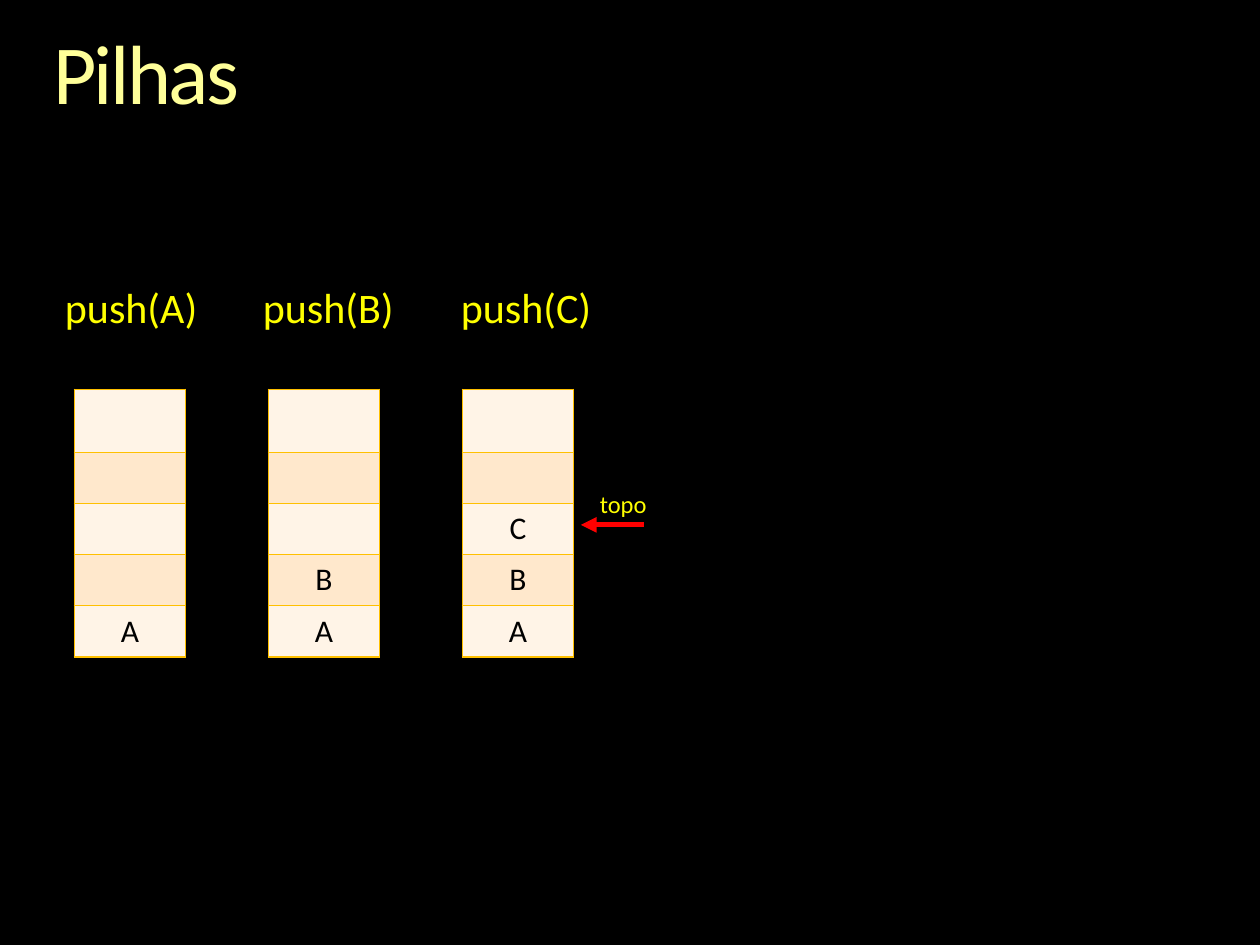
from lxml import etree
from pptx import Presentation
from pptx.dml.color import RGBColor
from pptx.enum.shapes import MSO_CONNECTOR
from pptx.enum.text import PP_ALIGN
from pptx.oxml import parse_xml
from pptx.oxml.ns import nsdecls, qn
from pptx.util import Cm, Pt

STRAIGHT = MSO_CONNECTOR.STRAIGHT
LEFT, CENTER = PP_ALIGN.LEFT, PP_ALIGN.CENTER


def color(value):
    return RGBColor.from_string(value)


def style(p, size, value, align=LEFT):
    p.alignment = align
    p.font.name = "Calibri"
    p.font.size = Pt(size)
    p.font.color.rgb = color(value)


prs = Presentation()
prs.slide_width, prs.slide_height = Cm(25.4), Cm(19.05)
s = prs.slides.add_slide(prs.slide_layouts[6])
s.background.fill.solid()
s.background.fill.fore_color.rgb = color("000000")

# Title
tf = s.shapes.add_textbox(Cm(1.07), Cm(0.64), Cm(23.29), Cm(1.85)).text_frame
tf.word_wrap = True
tf.margin_left = tf.margin_right = tf.margin_top = tf.margin_bottom = 0
p = tf.paragraphs[0]
r = p.add_run()
r.text = "Pilhas"
r.font._element.set("spc", "-150")
p.line_spacing = 0.9
style(p, 48, "FFFF99")

# Operation labels, one tab stop per stack
pitch = 3.99
tf = s.shapes.add_textbox(Cm(0.48), Cm(5.56), Cm(24.46), Cm(1.27)).text_frame
tf.word_wrap = True
tf.margin_left = Cm(0.83)
p = tf.paragraphs[0]
p.text = "push(A)\tpush(B)\tpush(C)"
tabs = etree.SubElement(p._p.get_or_add_pPr(), qn("a:tabLst"))
for i in (1, 2):
    etree.SubElement(tabs, qn("a:tab"), pos=str(Cm(pitch * i)), algn="l")
style(p, 24, "FFFF00")

# Stacks, filled from the bottom up
heights = [1.27] + [1.03] * 4
bands = ["FFF4E7", "FFE8CC"]
for i, items in enumerate(["A", "BA", "CBA"]):
    table = s.shapes.add_table(5, 1, Cm(1.5 + 3.91 * i), Cm(7.85),
                               Cm(2.24), Cm(sum(heights))).table
    table.first_row = table.horz_banding = False
    for row, text in enumerate(items.rjust(5)):
        table.rows[row].height = Cm(heights[row])
        cell = table.cell(row, 0)
        cell.text = text.strip()
        style(cell.text_frame.paragraphs[0], 18, "000000", CENTER)
        tcPr = cell._tc.get_or_add_tcPr()
        for side in ("lnL", "lnR", "lnT", "lnB"):
            tcPr.append(parse_xml(
                f'<a:{side} {nsdecls("a")} w="12700"><a:solidFill>'
                f'<a:srgbClr val="FFC000"/></a:solidFill></a:{side}>'))
        cell.fill.solid()
        cell.fill.fore_color.rgb = color(bands[row % 2])

# Pointer to the top of the last stack
arrow = s.shapes.add_connector(STRAIGHT, Cm(12.98), Cm(10.58), Cm(11.71), Cm(10.58))
arrow.line.color.rgb = color("FF0000")
arrow.line.width = Pt(3)
etree.SubElement(arrow.line._get_or_add_ln(), qn("a:tailEnd"), type="triangle")
etree.SubElement(arrow._element.spPr, qn("a:effectLst"))

tf = s.shapes.add_textbox(Cm(11.79), Cm(9.73), Cm(1.55), Cm(0.86)).text_frame
tf.word_wrap = False
p = tf.paragraphs[0]
p.text = "topo"
style(p, 14, "FFFF00", CENTER)

prs.save("out.pptx")
